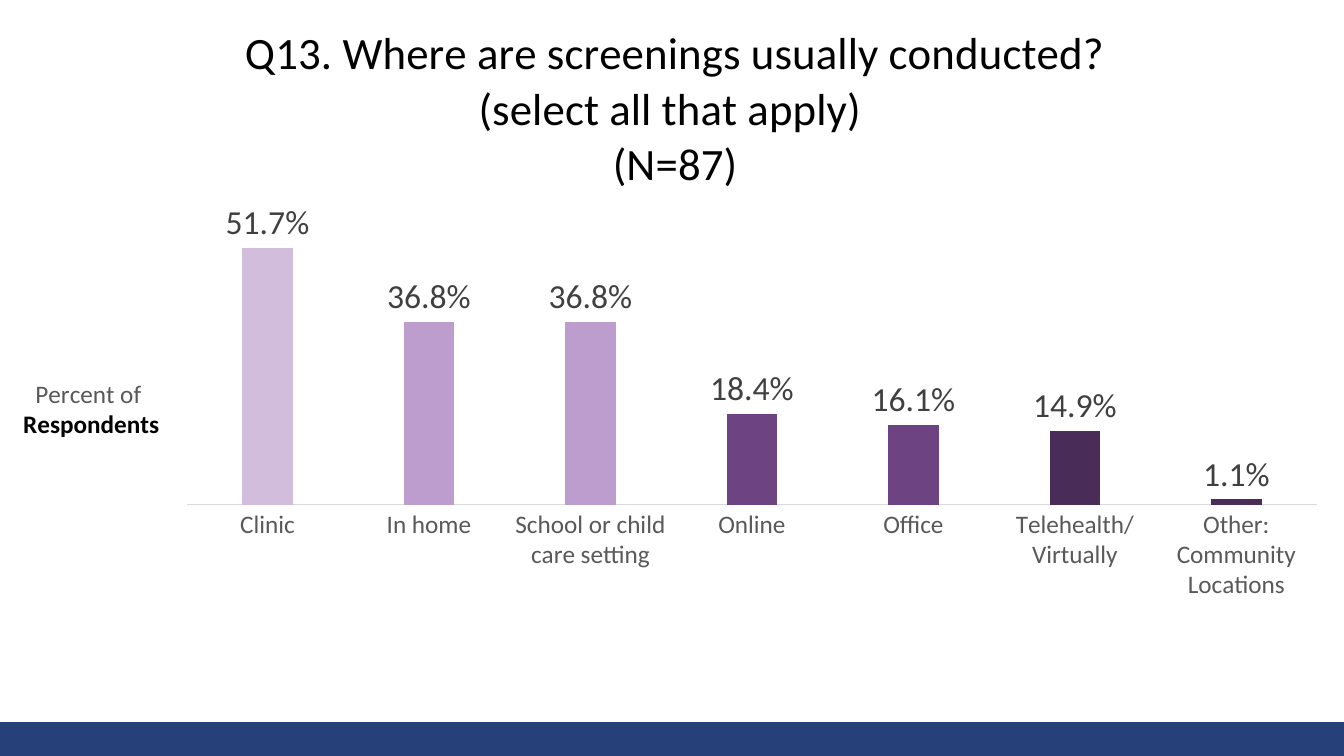
from lxml import etree
from pptx import Presentation
from pptx.chart.data import CategoryChartData as ChartData
from pptx.dml.color import RGBColor
from pptx.enum.chart import (
    XL_CHART_TYPE as Kind,
    XL_LABEL_POSITION as LabelPos,
    XL_TICK_LABEL_POSITION as TickPos,
    XL_TICK_MARK as Tick,
)
from pptx.enum.shapes import MSO_SHAPE as Shape
from pptx.enum.text import PP_ALIGN as Align
from pptx.oxml.ns import qn
from pptx.util import Inches, Pt

BLACK = RGBColor(0x00, 0x00, 0x00)
DARK = RGBColor(0x40, 0x40, 0x40)
GRAY = RGBColor(0x59, 0x59, 0x59)
RULE = RGBColor(0xD9, 0xD9, 0xD9)
NAVY = RGBColor(0x26, 0x40, 0x79)
PURPLE = RGBColor(0x91, 0x5B, 0xAB)
PALE = RGBColor(0xD3, 0xBD, 0xDD)
LIGHT = RGBColor(0xBD, 0x9D, 0xCD)
MID = RGBColor(0x6D, 0x43, 0x82)
DEEP = RGBColor(0x49, 0x2C, 0x57)

FONT = "Calibri"
WIDTH, HEIGHT = 13.33, 7.5
BAND = 0.33

PLACES = [
    ("Clinic", 0.517, PALE),
    ("In home", 0.368, LIGHT),
    ("School or child care setting", 0.368, LIGHT),
    ("Online", 0.184, MID),
    ("Office", 0.161, MID),
    ("Telehealth/Virtually", 0.149, DEEP),
    ("Other: Community Locations", 0.011, DEEP),
]


def style(font, size, color, bold=False):
    font.name, font.size, font.bold = FONT, Pt(size), bold
    font.color.rgb = color


def write(para, text, size=18, color=BLACK, bold=False):
    para.alignment = Align.CENTER
    run = para.add_run()
    run.text = text
    style(run.font, size, color, bold)


def pin(part, index, inner=False, **box):
    """Fix a chart part at fractions x, y, w, h of the chart area."""
    for old in part.findall(qn("c:layout")):
        part.remove(old)
    layout = etree.Element(qn("c:layout"))
    manual = etree.SubElement(layout, qn("c:manualLayout"))
    marks = {"layoutTarget": "inner"} if inner else {}
    marks.update(xMode="edge", yMode="edge", **box)
    for tag, val in marks.items():
        etree.SubElement(manual, qn("c:" + tag)).set("val", str(val))
    part.insert(index, layout)


def add_title(chart):
    chart.has_title = True
    title = chart.chart_title
    frame = title.text_frame
    lines = ["Q13. Where are screenings usually conducted?",
             "(select all that apply) ", "(N=87)"]
    for i, line in enumerate(lines):
        para = frame.add_paragraph() if i else frame.paragraphs[0]
        write(para, line, size=32)
    title.include_in_layout = False
    pin(title._element, 1, x=0.18, y=0.035)


def format_axes(chart):
    cats = chart.category_axis
    cats.major_tick_mark = cats.minor_tick_mark = Tick.NONE
    cats.has_major_gridlines = False
    cats.format.line.color.rgb = RULE
    cats.format.line.width = Pt(0.75)
    style(cats.tick_labels.font, 18, GRAY)

    vals = chart.value_axis
    vals.minimum_scale, vals.maximum_scale = 0, 0.6
    vals.has_major_gridlines = False
    vals.major_tick_mark = vals.minor_tick_mark = Tick.NONE
    vals.tick_label_position = TickPos.NONE
    vals.format.line.fill.background()

    vals.has_title = True
    title = vals.axis_title
    frame = title.text_frame
    write(frame.paragraphs[0], "Percent of ", color=GRAY)
    write(frame.add_paragraph(), "Respondents", bold=True)
    body = frame._txBody.find(qn("a:bodyPr"))
    body.set("rot", "0")
    body.set("vert", "horz")
    pin(title._element, 1, x=0.015, y=0.61)


def format_bars(plot):
    plot.gap_width, plot.overlap = 219, -27
    plot.vary_by_categories = False
    bars = plot.series[0]
    bars.format.fill.solid()
    bars.format.fill.fore_color.rgb = PURPLE
    for i, (_, _, color) in enumerate(PLACES):
        fill = bars.points[i].format.fill
        fill.solid()
        fill.fore_color.rgb = color
    plot.has_data_labels = True
    labels = plot.data_labels
    labels.show_value = True
    labels.number_format, labels.number_format_is_linked = "0.0%", False
    labels.position = LabelPos.OUTSIDE_END
    style(labels.font, 24, DARK)


def add_survey(slide, x, y, w, h):
    data = ChartData(number_format="0.0%")
    data.categories = [name for name, _, _ in PLACES]
    data.add_series("Series 1", [share for _, share, _ in PLACES])
    box = [Inches(v) for v in (x, y, w, h)]
    chart = slide.shapes.add_chart(Kind.COLUMN_CLUSTERED, *box, data).chart
    style(chart.font, 10, BLACK)
    chart.has_legend = False
    add_title(chart)
    format_axes(chart)
    format_bars(chart.plots[0])
    area = chart._chartSpace.find(".//" + qn("c:plotArea"))
    pin(area, 0, inner=True, x=0.139, y=0.338, w=0.841, h=0.486)


def add_band(slide, x, y, w, h):
    box = [Inches(v) for v in (x, y, w, h)]
    band = slide.shapes.add_shape(Shape.RECTANGLE, *box)
    band.shadow.inherit = False
    band.fill.solid()
    band.fill.fore_color.rgb = NAVY
    band.line.color.rgb = NAVY
    band.line.width = Pt(1)


def main():
    deck = Presentation()
    deck.slide_width, deck.slide_height = Inches(WIDTH), Inches(HEIGHT)
    slide = deck.slides.add_slide(deck.slide_layouts[6])
    add_band(slide, 0, HEIGHT - BAND, WIDTH, BAND)
    add_survey(slide, 0, 0, WIDTH, 6.08)
    deck.save("out.pptx")


if __name__ == "__main__":
    main()
